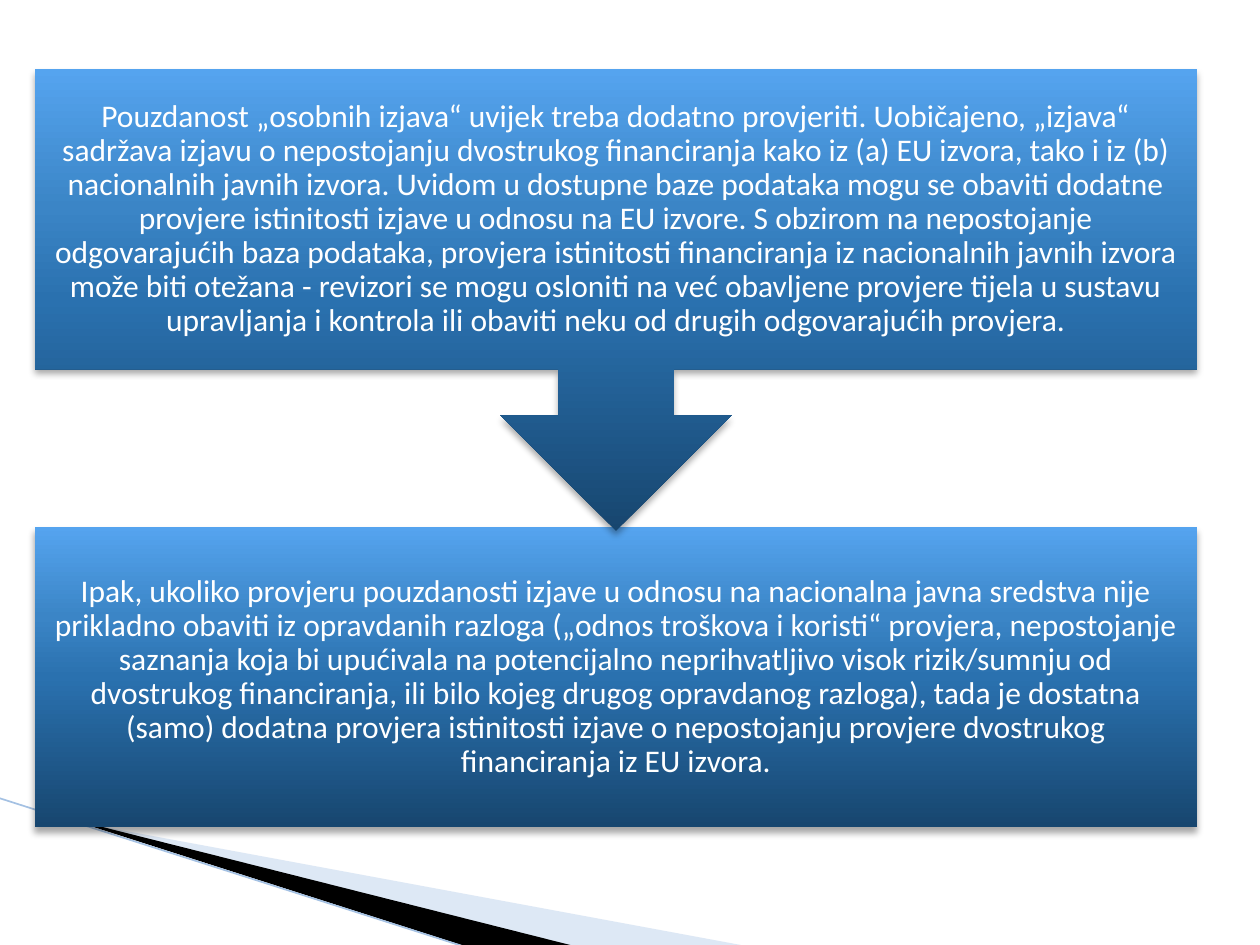
from lxml import etree
from pptx import Presentation
from pptx.dml.color import RGBColor
from pptx.enum.shapes import MSO_CONNECTOR, MSO_SHAPE
from pptx.enum.text import MSO_ANCHOR, PP_ALIGN
from pptx.oxml import parse_xml
from pptx.oxml.ns import nsdecls, qn
from pptx.util import Pt

RECTANGLE = MSO_SHAPE.RECTANGLE
ARROW_CALLOUT = MSO_SHAPE.UP_ARROW_CALLOUT
STRAIGHT = MSO_CONNECTOR.STRAIGHT
MIDDLE = MSO_ANCHOR.MIDDLE
CENTER = PP_ALIGN.CENTER

GRADIENT = [(0, "17466F"), (50, "2A71AF"), (70, "3B85C6"), (100, "55A4EF")]

RELIABILITY = (
    "Pouzdanost „osobnih izjava“ uvijek treba dodatno provjeriti. Uobičajeno, „izjava“ "
    "sadržava izjavu o nepostojanju dvostrukog financiranja kako iz (a) EU izvora, tako i iz (b) "
    "nacionalnih javnih izvora. Uvidom u dostupne baze podataka mogu se obaviti dodatne "
    "provjere istinitosti izjave u odnosu na EU izvore. S obzirom na nepostojanje "
    "odgovarajućih baza podataka, provjera istinitosti financiranja iz nacionalnih javnih izvora "
    "može biti otežana - revizori se mogu osloniti na već obavljene provjere tijela u sustavu "
    "upravljanja i kontrola ili obaviti neku od drugih odgovarajućih provjera."
)
EXCEPTION = (
    "Ipak, ukoliko provjeru pouzdanosti izjave u odnosu na nacionalna javna sredstva nije "
    "prikladno obaviti iz opravdanih razloga („odnos troškova i koristi“ provjera, nepostojanje "
    "saznanja koja bi upućivala na potencijalno neprihvatljivo visok rizik/sumnju od "
    "dvostrukog financiranja, ili bilo kojeg drugog opravdanog razloga), tada je dostatna "
    "(samo) dodatna provjera istinitosti izjave o nepostojanju provjere dvostrukog "
    "financiranja iz EU izvora."
)


def color(hex_code):
    return RGBColor.from_string(hex_code)


def add_text(slide, text, left, top, width, height, *, size=18, font="Calibri",
             fill="FFFFFF", inset=10):
    box = slide.shapes.add_textbox(Pt(left), Pt(top), Pt(width), Pt(height))
    frame = box.text_frame
    frame.word_wrap = True
    frame.vertical_anchor = MIDDLE
    frame.margin_left = frame.margin_right = Pt(inset)
    frame.margin_top = frame.margin_bottom = Pt(inset)
    paragraph = frame.paragraphs[0]
    paragraph.alignment = CENTER
    paragraph.line_spacing = 0.9
    paragraph.space_after = Pt(6.3)
    run = paragraph.add_run()
    run.text = text
    run.font.size = Pt(size)
    run.font.name = font
    run.font.color.rgb = color(fill)


def add_panel(slide, kind, left, top, width, height, rotation=0):
    """Shape with a gradient, dark at the foot, and a soft shadow below."""
    panel = slide.shapes.add_shape(kind, Pt(left), Pt(top), Pt(width), Pt(height))
    panel.rotation = rotation
    panel.line.fill.background()
    panel.shadow.inherit = False
    stops = "".join(
        f'<a:gs pos="{position * 1000}"><a:srgbClr val="{shade}"/></a:gs>'
        for position, shade in GRADIENT
    )
    properties = panel.element.spPr
    properties.find(qn("a:prstGeom")).addnext(parse_xml(
        f'<a:gradFill {nsdecls("a")} rotWithShape="0"><a:gsLst>{stops}</a:gsLst>'
        '<a:lin ang="16200000" scaled="0"/></a:gradFill>'
    ))
    properties.find(qn("a:effectLst")).append(parse_xml(
        f'<a:outerShdw {nsdecls("a")} blurRad="{Pt(4)}" dist="{Pt(3)}" dir="5400000" '
        'rotWithShape="0"><a:srgbClr val="000000"><a:alpha val="35000"/></a:srgbClr>'
        '</a:outerShdw>'
    ))


def add_wedge(slide, left, top, corners, fill, opacity=100):
    points = [(Pt(left + x), Pt(top + y)) for x, y in corners]
    builder = slide.shapes.build_freeform(*points[0], scale=1.0)
    builder.add_line_segments(points[1:], close=True)
    wedge = builder.convert_to_shape()
    wedge.shadow.inherit = False
    wedge.fill.solid()
    wedge.fill.fore_color.rgb = color(fill)
    wedge.line.fill.background()
    if opacity < 100:
        shade = wedge.element.spPr.find(qn("a:solidFill"))[0]
        etree.SubElement(shade, qn("a:alpha")).set("val", str(opacity * 1000))


def add_corner_decoration(slide, left, top):
    add_wedge(slide, left + 40, top + 12.5,
              [(0, 0.5), (388.8, 72.5), (288.7, 72.5), (0, 0)], "ABC6E6", opacity=40)
    add_wedge(slide, left + 38.5, top + 11.5,
              [(0, 0), (290.9, 73.4), (229.7, 73.9), (0.7, 0.5)], "000000")
    edge = slide.shapes.add_connector(
        STRAIGHT, Pt(left - 0.7), Pt(top), Pt(left + 267), Pt(top + 85.5))
    edge.line.color.rgb = color("A4C1E3")
    edge.line.width = Pt(0.95)
    etree.SubElement(edge.element.spPr, qn("a:effectLst"))


def add_process(slide, left, top, width, height):
    """Two text panels, the upper one pointing down at the lower one."""
    panel_height = height * 0.396
    callout_height = panel_height / 0.65
    lower_top = top + height - panel_height
    add_panel(slide, RECTANGLE, left, lower_top, width, panel_height)
    add_text(slide, EXCEPTION, left, lower_top, width, panel_height)
    add_panel(slide, ARROW_CALLOUT, left, top, width, callout_height, rotation=180)
    add_text(slide, RELIABILITY, left, top, width, panel_height)


def main():
    deck = Presentation()
    deck.slide_width, deck.slide_height = Pt(720), Pt(540)
    slide = deck.slides.add_slide(deck.slide_layouts[6])
    add_corner_decoration(slide, 0, 456)
    add_process(slide, 20, 39.5, 664, 433)
    deck.save("out.pptx")


if __name__ == "__main__":
    main()
